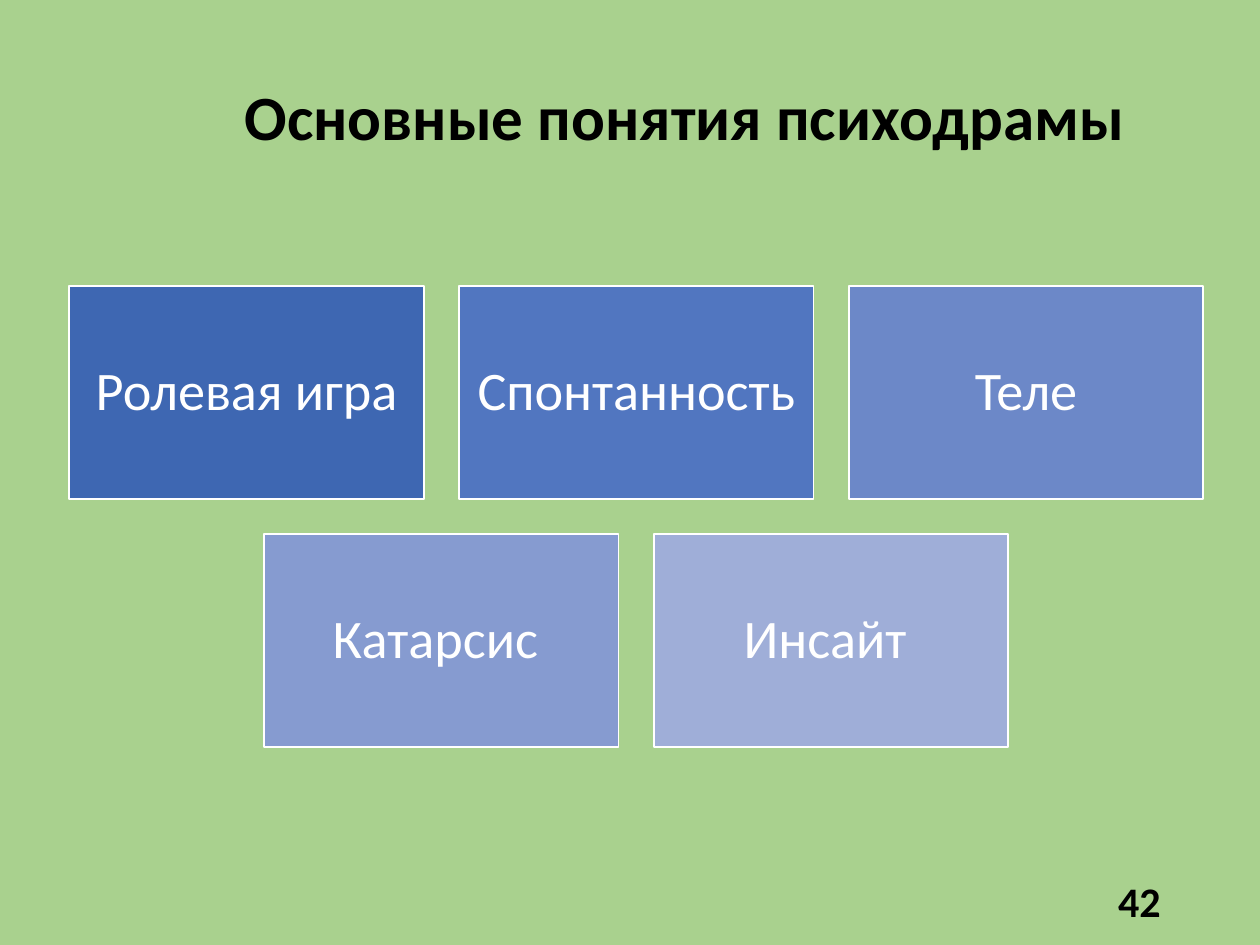
from pptx import Presentation
from pptx.dml.color import RGBColor
from pptx.enum import shapes, text
from pptx.util import Inches, Pt

COLORS = {
    "background": "A9D18E",
    "ink": "000000",
    "white": "FFFFFF",
    "role_play": "3E67B2",
    "spontaneity": "5176C0",
    "tele": "6C88C8",
    "catharsis": "869BD0",
    "insight": "9FAED8",
}
CONCEPT_ROWS = [
    [("Ролевая игра", "role_play"), ("Спонтанность ", "spontaneity"), ("Теле", "tele")],
    [("Катарсис ", "catharsis"), ("Инсайт ", "insight")],
]


def rgb(name):
    """Return the named colour."""
    return RGBColor.from_string(COLORS[name])


def write(tf, words, size, color, align, bold=False):
    """Set one vertically centred paragraph in a text frame and return it."""
    tf.word_wrap = True
    tf.vertical_anchor = text.MSO_ANCHOR.MIDDLE
    p = tf.paragraphs[0]
    p.text = words
    p.alignment = align
    p.font.name = "Calibri"
    p.font.size = Pt(size)
    p.font.bold = bold
    p.font.color.rgb = rgb(color)
    return p


def add_label(s, box, words, size, align):
    """Place a bold black text box in the given box."""
    sp = s.shapes.add_textbox(*map(Inches, box))
    write(sp.text_frame, words, size, "ink", align, bold=True)


def add_concept(grp, box, words, color):
    """Place one filled concept card in the given box."""
    sp = grp.shapes.add_shape(shapes.MSO_SHAPE.RECTANGLE, *map(Inches, box))
    sp.shadow.inherit = False
    sp.fill.solid()
    sp.fill.fore_color.rgb = rgb(color)
    sp.line.color.rgb = rgb("white")
    sp.line.width = Pt(1)
    tf = sp.text_frame
    tf.margin_left = tf.margin_right = tf.margin_top = tf.margin_bottom = Inches(0.13)
    p = write(tf, words, 31, "white", text.PP_ALIGN.CENTER)
    p.line_spacing = 0.9


def add_concept_grid(s, box, rows, gap=0.28):
    """Fill the box with rows of equal cards, each row centred."""
    left, top, width, height = box
    columns = max(map(len, rows))
    card_w = (width - gap * (columns - 1)) / columns
    card_h = (height - gap * (len(rows) - 1)) / len(rows)
    grp = s.shapes.add_group_shape()
    for i, row in enumerate(rows):
        indent = (columns - len(row)) * (card_w + gap) / 2
        for j, (words, color) in enumerate(row):
            x = left + indent + j * (card_w + gap)
            y = top + i * (card_h + gap)
            add_concept(grp, (x, y, card_w, card_h), words, color)


def main():
    """Build and save the slide."""
    prs = Presentation()
    prs.slide_width, prs.slide_height = Inches(10), Inches(7.5)
    s = prs.slides.add_slide(prs.slide_layouts[6])
    s.background.fill.solid()
    s.background.fill.fore_color.rgb = rgb("background")
    add_label(s, (1.3, 0.44, 8.27, 0.95), "Основные понятия психодрамы", 36,
              text.PP_ALIGN.CENTER)
    add_concept_grid(s, (0.55, 2.27, 9, 3.66), CONCEPT_ROWS)
    add_label(s, (7.06, 6.95, 2.25, 0.4), "42", 24, text.PP_ALIGN.RIGHT)
    prs.save("out.pptx")


if __name__ == "__main__":
    main()
